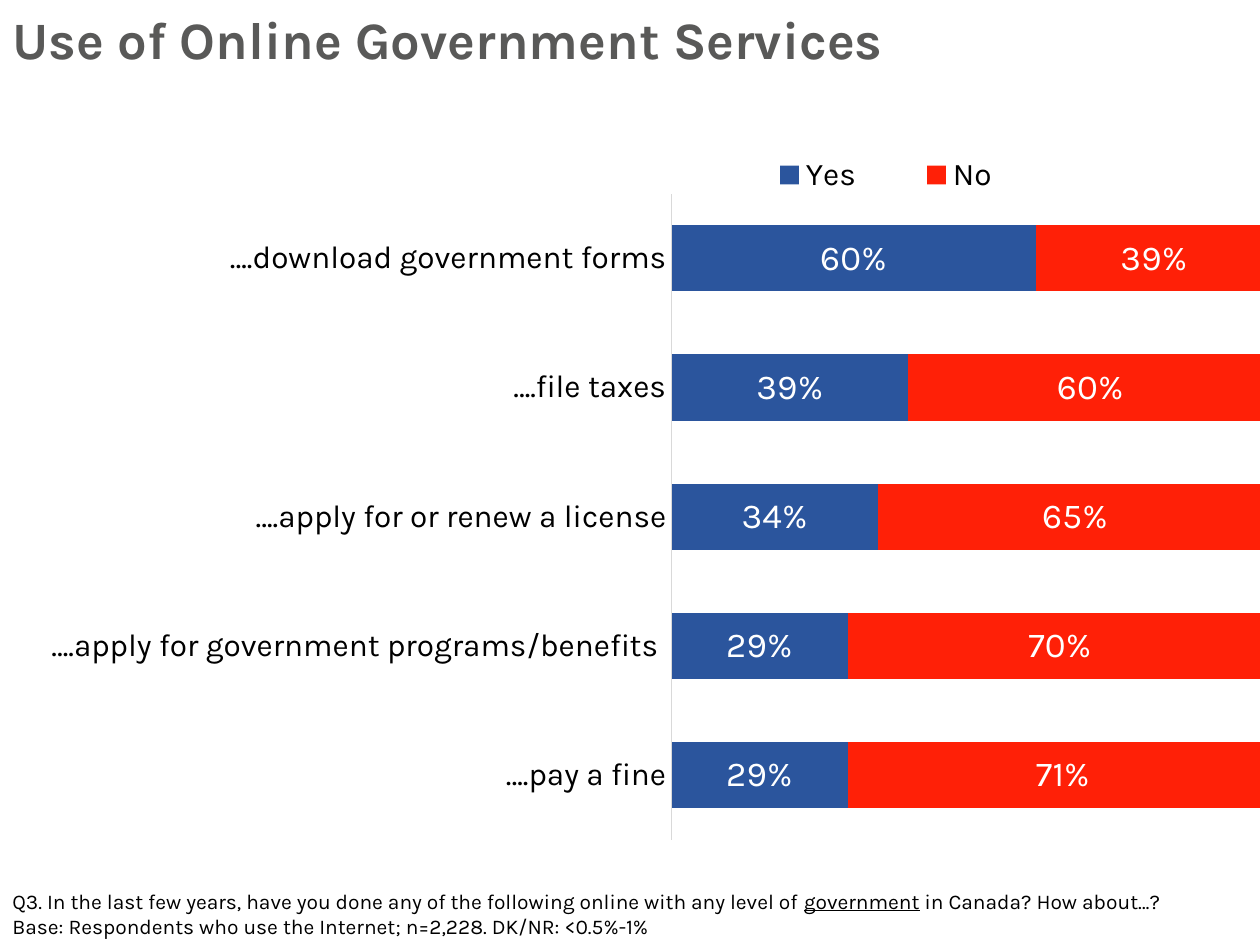
from lxml.etree import SubElement
from pptx import Presentation
from pptx.chart.data import CategoryChartData
from pptx.dml.color import RGBColor
from pptx.enum.chart import (XL_CHART_TYPE, XL_LABEL_POSITION,
                             XL_LEGEND_POSITION, XL_TICK_MARK)
from pptx.enum.text import MSO_ANCHOR, MSO_AUTO_SIZE, PP_ALIGN
from pptx.oxml.ns import qn
from pptx.util import Inches, Pt

COLORS = {"title": "595958", "text": "000000", "label": "FFFFFF",
          "axis": "D9D9D9", "Yes": "2B559D", "No": "FF2007"}
FONT = "Karla"

CATS = ["….pay a fine", "….apply for government programs/benefits ",
        "….apply for or renew a license", "….file taxes",
        "….download government forms"]
VALS = {"Yes": [0.29, 0.29, 0.34, 0.39, 0.60],
        "No": [0.71, 0.70, 0.65, 0.60, 0.39]}

# Each run of the note: text and whether it is underlined
NOTE = [
    [("Q3. In the last few years, have you done any of the following online "
      "with any level of ", False),
     ("government", True), (" in Canada? How about…?", False)],
    [("Base: Respondents who use the Internet; n=2,228. DK/NR: <0.5%-1%",
      False)],
]


def tint(key):
    return RGBColor.from_string(COLORS[key])


def set_font(font, size, key, **extra):
    for name, val in {"name": FONT, "size": Pt(size), **extra}.items():
        setattr(font, name, val)
    font.color.rgb = tint(key)


def place(shape, left, top, width, height):
    box = {"left": left, "top": top, "width": width, "height": height}
    for name, val in box.items():
        setattr(shape, name, Inches(val))


def set_layout(host, index, **parts):
    """Give a plot area or legend a fixed place, as shares of the chart."""
    for old in host.findall(qn("c:layout")):
        host.remove(old)
    layout = SubElement(host, qn("c:layout"))
    host.insert(index, layout)
    manual = SubElement(layout, qn("c:manualLayout"))
    for tag, val in parts.items():
        SubElement(manual, qn("c:" + tag)).set("val", str(val))


def add_title(slide, text):
    title = slide.shapes.title
    place(title, 0, 0.05, 10, 0.58)
    frame = title.text_frame
    frame.text = text
    frame.auto_size = MSO_AUTO_SIZE.NONE
    frame.vertical_anchor = MSO_ANCHOR.MIDDLE
    para = frame.paragraphs[0]
    para.alignment = PP_ALIGN.LEFT
    para.line_spacing = 0.9
    set_font(para.runs[0].font, 30, "title", bold=True)


def add_note(slide, lines):
    box = slide.shapes.add_textbox(0, Inches(7), Inches(10), Inches(0.5))
    frame = box.text_frame
    frame.word_wrap = True
    for i, line in enumerate(lines):
        para = frame.add_paragraph() if i else frame.paragraphs[0]
        for text, under in line:
            run = para.add_run()
            run.text = text
            set_font(run.font, 12, "text", underline=under)


def add_bars(slide):
    data = CategoryChartData(number_format="0%")
    data.categories = CATS
    for name, vals in VALS.items():
        data.add_series(name, vals)
    chart = slide.shapes.add_chart(
        XL_CHART_TYPE.BAR_STACKED, Inches(-0.38), Inches(1.14),
        Inches(11.49), Inches(5.53), data).chart
    chart.has_title = False
    set_font(chart.font, 18, "text")

    # Bars and their labels
    plot = chart.plots[0]
    for name, val in {"gap_width": 95, "overlap": 100,
                      "vary_by_categories": False}.items():
        setattr(plot, name, val)
    for bars in plot.series:
        bars.format.fill.solid()
        bars.format.fill.fore_color.rgb = tint(bars.name)
        labels = bars.data_labels
        for name, val in {"show_value": True, "number_format": "0%",
                          "number_format_is_linked": False,
                          "position": XL_LABEL_POSITION.CENTER}.items():
            setattr(labels, name, val)
        set_font(labels.font, 20, "label")

    # Axes
    cat = chart.category_axis
    cat.major_tick_mark = cat.minor_tick_mark = XL_TICK_MARK.NONE
    cat.format.line.color.rgb = tint("axis")
    cat.format.line.width = Pt(0.75)
    set_font(cat.tick_labels.font, 18, "text")
    for name, val in {"visible": False, "has_major_gridlines": False,
                      "minimum_scale": 0, "maximum_scale": 1.2}.items():
        setattr(chart.value_axis, name, val)

    # Legend and fixed places
    chart.has_legend = True
    legend = chart.legend
    legend.position = XL_LEGEND_POSITION.TOP
    legend.include_in_layout = False
    set_font(legend.font, 18, "text")
    set_layout(legend._element, 1, xMode="edge", yMode="edge",
               x=0.53, y=0.01, w=0.23, h=0.07)
    set_layout(chart._chartSpace.chart.plotArea, 0, layoutTarget="inner",
               xMode="edge", yMode="edge", x=0.497, y=0.072,
               w=0.503, h=0.928)


def main():
    deck = Presentation()
    deck.slide_width, deck.slide_height = Inches(10), Inches(7.5)
    slide = deck.slides.add_slide(deck.slide_layouts[5])
    add_note(slide, NOTE)
    add_title(slide, "Use of Online Government Services")
    add_bars(slide)
    deck.save("out.pptx")


if __name__ == "__main__":
    main()
